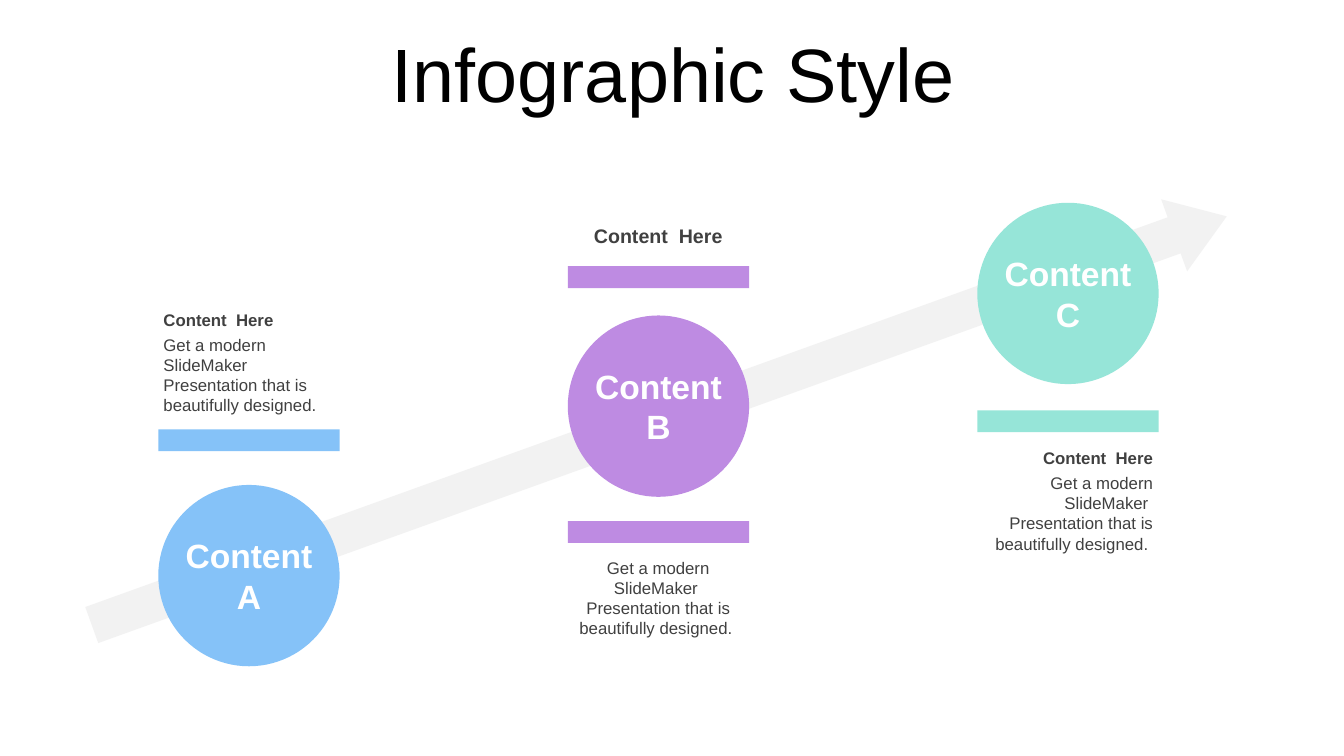
from pptx import Presentation
from pptx.dml.color import RGBColor
from pptx.enum.shapes import MSO_SHAPE
from pptx.enum.text import MSO_ANCHOR, PP_ALIGN
from pptx.util import Cm, Pt

BLACK = RGBColor(0x00, 0x00, 0x00)
WHITE = RGBColor(0xFF, 0xFF, 0xFF)
DARK = RGBColor(0x40, 0x40, 0x40)
PALE = RGBColor(0xF2, 0xF2, 0xF2)
BLUE = RGBColor(0x85, 0xC2, 0xF8)
PURPLE = RGBColor(0xBE, 0x8B, 0xE2)
MINT = RGBColor(0x96, 0xE5, 0xD8)

DIAMETER = 4.57
FIRST_LEFT, STEP = 3.99, 10.32
HEADING = "Content  Here"
BODY = "Get a modern SlideMaker  Presentation that is beautifully designed."

STAGES = [
    dict(letter="A", color=BLUE, top=12.22, bars=[10.82], align=PP_ALIGN.LEFT,
         heading=(7.67, 0.76, 12), body=(8.31, BODY)),
    dict(letter="B", color=PURPLE, top=7.95, bars=[6.71, 13.13], align=PP_ALIGN.CENTER,
         heading=(5.51, 0.86, 14), body=(13.92, BODY + " ")),
    dict(letter="C", color=MINT, top=5.11, bars=[10.34], align=PP_ALIGN.RIGHT,
         heading=(11.15, 0.76, 12), body=(11.79, BODY + " ")),
]


def write(tf, text, size=12, color=DARK, bold=False, align=PP_ALIGN.LEFT, anchor=MSO_ANCHOR.MIDDLE):
    """Fill a text frame, one paragraph per line of text."""
    tf.word_wrap = True
    tf.vertical_anchor = anchor
    for i, line in enumerate(text.split("\n")):
        p = tf.paragraphs[0] if i == 0 else tf.add_paragraph()
        p.alignment = align
        r = p.add_run()
        r.text = line
        r.font.name = "Arial"
        r.font.size = Pt(size)
        r.font.bold = bold
        r.font.color.rgb = color


class Deck:
    """Holds the presentation and the current slide."""

    def __init__(self):
        """Start a wide presentation with one title-only slide."""
        self.prs = Presentation()
        self.prs.slide_width, self.prs.slide_height = Cm(33.87), Cm(19.05)
        self.s = self.prs.slides.add_slide(self.prs.slide_layouts[5])

    def title(self, text, *box):
        """Place and format the title."""
        sp = self.s.shapes.title
        sp.left, sp.top, sp.width, sp.height = map(Cm, box)
        write(sp.text_frame, text, size=54, color=BLACK, align=PP_ALIGN.CENTER)
        p = sp.text_frame.paragraphs[0]
        p.line_spacing = 0.9
        p.space_before = Pt(10)

    def shape(self, kind, color, *box):
        """Add a flat filled shape."""
        sp = self.s.shapes.add_shape(kind, *map(Cm, box))
        sp.shadow.inherit = False
        sp.fill.solid()
        sp.fill.fore_color.rgb = color
        sp.line.fill.background()
        return sp

    def text(self, text, *box, **style):
        """Add a text box."""
        sp = self.s.shapes.add_textbox(*map(Cm, box))
        write(sp.text_frame, text, **style)

    def arrow(self):
        """Add the rising arrow behind the stages."""
        sp = self.shape(MSO_SHAPE.DOWN_ARROW, PALE, 15.65, -4.6, 1.93, 30.4)
        sp.adjustments[0], sp.adjustments[1] = 0.5, 0.73
        sp.rotation = 250.2

    def stage(self, left, letter, color, top, bars, align, heading, body):
        """Add a labelled circle with its bars and texts."""
        self.shape(MSO_SHAPE.OVAL, color, left, top, DIAMETER, DIAMETER)
        self.text(f"Content\n{letter}", left, top + 1.13, DIAMETER, 2.31,
                  size=24, color=WHITE, bold=True, align=PP_ALIGN.CENTER)
        for bar_top in bars:
            self.shape(MSO_SHAPE.RECTANGLE, color, left, bar_top, DIAMETER, 0.55)
        head_top, head_height, size = heading
        self.text(HEADING, left - 0.12, head_top, 4.8, head_height, size=size, bold=True, align=align)
        body_top, words = body
        self.text(words, left - 0.12, body_top, 4.8, 2.31, align=align, anchor=MSO_ANCHOR.TOP)


def main():
    """Build and save the slide."""
    deck = Deck()
    deck.title("Infographic Style", 0.89, 0.79, 32.16, 2.34)
    deck.arrow()
    for i, stage in enumerate(STAGES):
        deck.stage(FIRST_LEFT + i * STEP, **stage)
    deck.prs.save("out.pptx")


if __name__ == "__main__":
    main()
